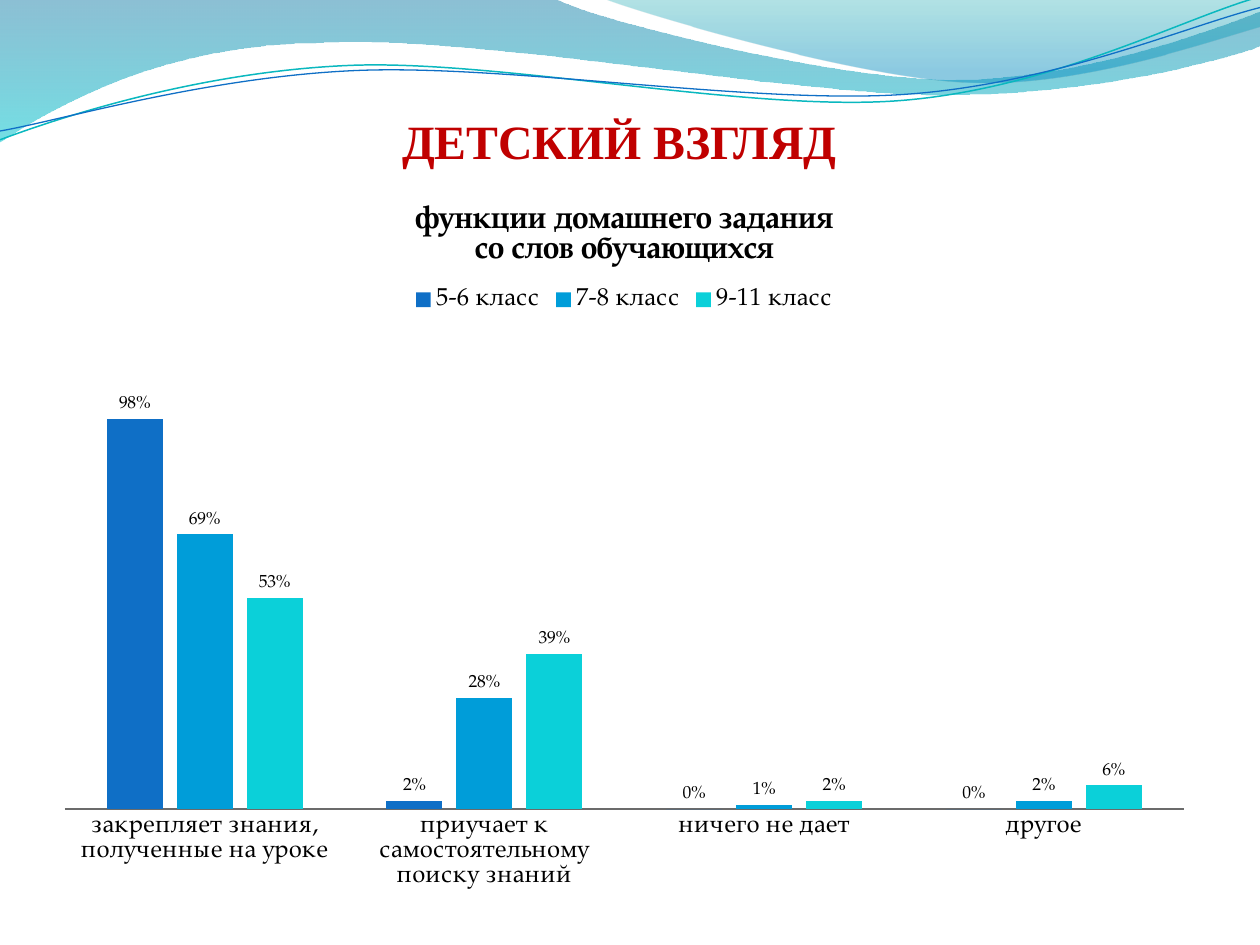
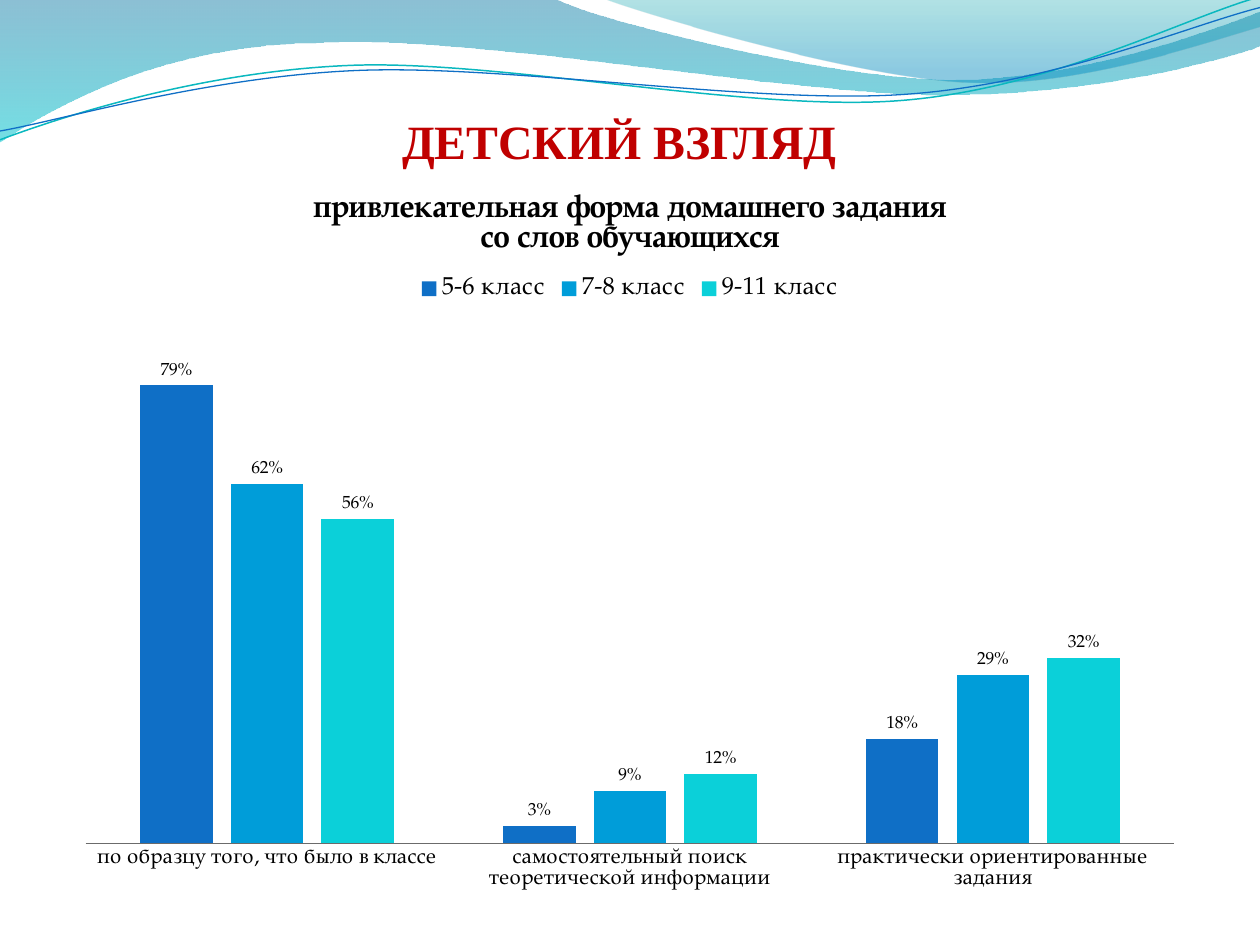
from itertools import chain

from lxml.etree import SubElement
from pptx import Presentation
from pptx.chart.data import CategoryChartData
from pptx.dml.color import RGBColor
from pptx.enum.chart import XL_CHART_TYPE as ChartType
from pptx.enum.chart import XL_LABEL_POSITION as LabelPosition
from pptx.enum.chart import XL_LEGEND_POSITION as LegendPosition
from pptx.enum.chart import XL_TICK_LABEL_POSITION as TickLabels
from pptx.enum.chart import XL_TICK_MARK as TickMark
from pptx.enum.text import MSO_ANCHOR as Anchor
from pptx.enum.text import PP_ALIGN as Align
from pptx.oxml.ns import qn
from pptx.util import Pt

PX = 9144

BLACK = RGBColor(0x00, 0x00, 0x00)
AXIS_GRAY = RGBColor(0x6B, 0x6B, 0x6B)
TITLE_RED = RGBColor(0xC0, 0x00, 0x00)
BLUE = RGBColor(0x0F, 0x6F, 0xC6)
SKY = RGBColor(0x00, 0x9D, 0xD9)
TURQUOISE = RGBColor(0x0B, 0xD0, 0xD9)
THREAD_TEAL = RGBColor(0x0A, 0xB8, 0xBF)
DEEP_BLUE = RGBColor(0x00, 0x74, 0xA1)
AQUA = RGBColor(0x00, 0xC6, 0xCF)
SEA_GREEN = RGBColor(0x00, 0xA1, 0xA9)
SEA_BLUE = RGBColor(0x00, 0x8B, 0xBF)

CHART_FONT = "TeX Gyre Pagella"
GRADES = {"5-6 класс": BLUE, "7-8 класс": SKY, "9-11 класс": TURQUOISE}

FORMATS = {
    "heading": {"name": "Times New Roman", "size": Pt(27.3), "bold": True},
    "chart": {"name": CHART_FONT, "size": Pt(10), "bold": False},
    "chart title": {"name": CHART_FONT, "size": Pt(18), "bold": True},
    "legend": {"name": CHART_FONT, "size": Pt(14), "bold": False},
}

LEFT_WAVE = [
    (0, -1), (440, -1),
    (476, 17, 664, 63, 758, 63), (853, 63, 958, 26, 1000, 9),
    (1001, 36),
    (983, 44, 870, 76, 746, 75), (622, 75, 382, 28, 257, 34),
    (129, 35, 46, 83, -1, 113), (0, -1),
]
RIGHT_WAVE = [
    (479, -1), (509, 11, 682, 62, 769, 65), (856, 69, 961, 32, 1000, 21),
    (1000, 0), (479, -1),
]
TEAL_THREAD = [
    (0, 111), (48, 93, 158, 57, 277, 52), (395, 47, 593, 89, 713, 80),
    (833, 71, 938, 15, 998, -2),
]
BLUE_THREAD = [
    (0, 104), (47, 96, 164, 61, 283, 56), (403, 51, 597, 83, 717, 75),
    (836, 67, 941, 21, 1000, 6),
]

SURVEYS = [
    {
        "title": ["функции домашнего задания", "со слов обучающихся"],
        "box": (33, 142, 925, 575),
        "answers": {
            "закрепляет знания, полученные на уроке": (0.98, 0.69, 0.53),
            "приучает к самостоятельному поиску знаний": (0.02, 0.28, 0.39),
            "ничего не дает": (0, 0.01, 0.02),
            "другое": (0, 0.02, 0.06),
        },
        "answer_size": 14, "top_value": 1.2, "plot_height": 0.66,
    },
    {
        "title": ["привлекательная форма домашнего задания",
                  "со слов обучающихся"],
        "box": (50, 133, 900, 583),
        "answers": {
            "по образцу того, что было в классе": (0.79, 0.62, 0.56),
            "самостоятельный поиск теоретической информации":
                (0.03, 0.09, 0.12),
            "практически ориентированные задания": (0.18, 0.29, 0.32),
        },
        "answer_size": 12, "top_value": 0.9, "plot_height": 0.71,
    },
]


def px(*lengths):
    return [round(length * PX) for length in lengths]


def apply(target, values):
    for name, value in values.items():
        setattr(target, name, value)


def style_font(font, style, color=BLACK):
    apply(font, FORMATS[style])
    font.color.rgb = color


def bend(shape, segments):
    corners = iter(list(shape._element.iter(qn("a:lnTo"))))
    for segment in segments[1:]:
        first = next(corners)
        if len(segment) == 6:
            first.tag = qn("a:cubicBezTo")
            for _ in range(2):
                corner = next(corners)
                first.append(corner[0])
                corner.getparent().remove(corner)


class Deck:
    def __init__(self):
        self.prs = Presentation()
        self.prs.slide_width, self.prs.slide_height = px(1000, 750)
        self.layout = self.prs.slide_layouts[6]
        self.slide = None

    def new_slide(self):
        self.slide = self.prs.slides.add_slide(self.layout)

    def shared_waves(self):
        self.wave(LEFT_WAVE, [(0, DEEP_BLUE, 45), (1, AQUA, 55)])
        self.wave(RIGHT_WAVE, [(0, SEA_GREEN, 30), (0.8, SEA_BLUE, 45)])
        self.thread(TEAL_THREAD, THREAD_TEAL, 0.85)
        self.thread(BLUE_THREAD, BLUE, 0.75)
        for shape in list(self.slide.shapes):
            self.layout.shapes._spTree.append(shape._element)

    def outline(self, segments, close):
        flat = px(*chain.from_iterable(segments))
        start, *rest = zip(flat[::2], flat[1::2])
        builder = self.slide.shapes.build_freeform(*start)
        builder.add_line_segments(rest, close=close)
        shape = builder.convert_to_shape()
        shape.shadow.inherit = False
        bend(shape, segments)
        return shape

    def wave(self, segments, stops):
        wave = self.outline(segments, True)
        wave.line.fill.background()
        wave.fill.gradient()
        wave.fill.gradient_angle = 270
        for stop, (position, color, _) in zip(wave.fill.gradient_stops, stops):
            stop.position = position
            stop.color.rgb = color
        tints = wave._element.spPr.iter(qn("a:srgbClr"))
        for tint, (_, _, opacity) in zip(list(tints), stops):
            SubElement(tint, qn("a:alpha"), val=str(opacity * 1000))

    def thread(self, segments, color, width):
        thread = self.outline(segments, False)
        thread.fill.background()
        thread.line.color.rgb = color
        thread.line.width = Pt(width)

    def heading(self, text):
        frame = self.slide.shapes.add_textbox(*px(25, 83, 933, 142)).text_frame
        apply(frame, {"word_wrap": True, "vertical_anchor": Anchor.TOP,
                      "margin_left": 0, "margin_right": 0,
                      "margin_top": px(6)[0], "margin_bottom": 0})
        line = frame.paragraphs[0]
        line.alignment = Align.CENTER
        run = line.add_run()
        run.text = text
        style_font(run.font, "heading", TITLE_RED)

    def survey_chart(self, title, box, answers, answer_size, top_value,
                     plot_height):
        data = CategoryChartData(number_format="0%")
        data.categories = list(answers)
        for grade, shares in zip(GRADES, zip(*answers.values())):
            data.add_series(grade, shares)
        chart = self.slide.shapes.add_chart(
            ChartType.COLUMN_CLUSTERED, *px(*box), data).chart
        style_font(chart.font, "chart")

        title_frame = chart.chart_title.text_frame
        title_frame.text = "\n".join(title)
        for line in title_frame.paragraphs:
            style_font(line.runs[0].font, "chart title")

        chart.has_legend = True
        apply(chart.legend, {"position": LegendPosition.TOP,
                             "include_in_layout": False})
        style_font(chart.legend.font, "legend")

        answer_axis = chart.category_axis
        apply(answer_axis, {"major_tick_mark": TickMark.NONE,
                            "minor_tick_mark": TickMark.NONE,
                            "tick_label_position": TickLabels.NEXT_TO_AXIS})
        answer_axis.format.line.color.rgb = AXIS_GRAY
        answer_axis.format.line.width = Pt(0.75)
        style_font(answer_axis.tick_labels.font, "legend")
        answer_axis.tick_labels.font.size = Pt(answer_size)
        apply(chart.value_axis, {"visible": False, "minimum_scale": 0,
                                 "maximum_scale": top_value,
                                 "major_tick_mark": TickMark.NONE,
                                 "has_major_gridlines": False})
        apply(chart.value_axis.tick_labels, {"number_format": "0%",
                                             "number_format_is_linked": False})

        plot = chart.plots[0]
        apply(plot, {"gap_width": 150, "overlap": -25,
                     "vary_by_categories": False})
        for bars, color in zip(plot.series, GRADES.values()):
            bars.format.fill.solid()
            bars.format.fill.fore_color.rgb = color
            apply(bars.data_labels, {"show_value": True, "number_format": "0%",
                                     "number_format_is_linked": False,
                                     "position": LabelPosition.OUTSIDE_END})
            style_font(bars.data_labels.font, "chart")
        self.place_plot(chart, plot_height)

    def place_plot(self, chart, height):
        area = chart._chartSpace.find(".//" + qn("c:plotArea"))
        for old in area.findall(qn("c:layout")):
            area.remove(old)
        layout = SubElement(area, qn("c:layout"))
        area.insert(0, layout)
        manual = SubElement(layout, qn("c:manualLayout"))
        values = {"layoutTarget": "inner", "xMode": "edge", "yMode": "edge",
                  "x": 0.02, "y": 0.21, "w": 0.96, "h": height}
        for name, value in values.items():
            SubElement(manual, qn("c:" + name), val=str(value))


def main():
    deck = Deck()
    for number, survey in enumerate(SURVEYS):
        deck.new_slide()
        if number == 0:
            deck.shared_waves()
        deck.heading("ДЕТСКИЙ ВЗГЛЯД")
        deck.survey_chart(**survey)
    deck.prs.save("out.pptx")


if __name__ == "__main__":
    main()
